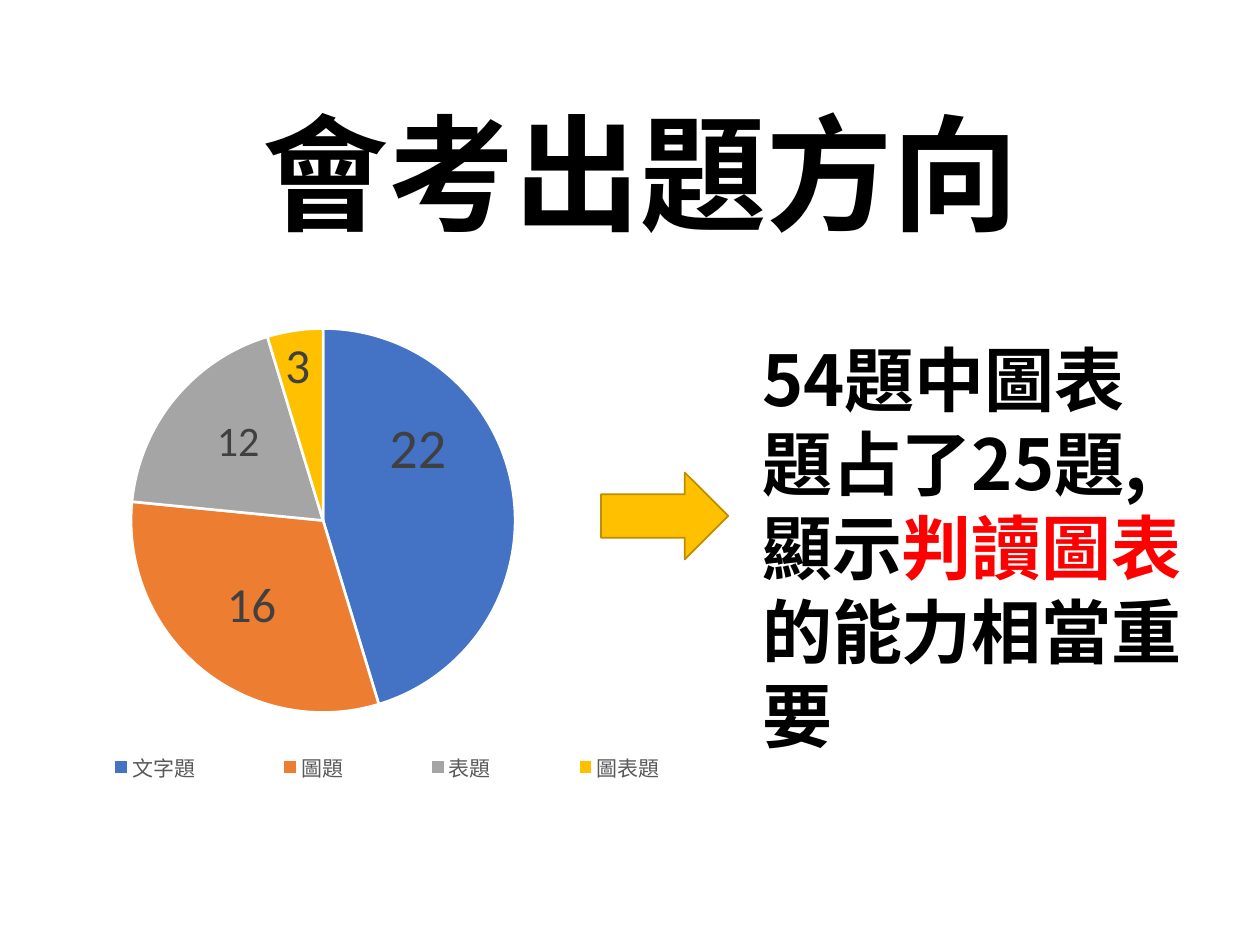
import pptx
import pptx.util
import pptx.oxml
import pptx.oxml.ns
import pptx.dml.color
import pptx.chart.data
import pptx.enum.chart
import pptx.enum.shapes
import pptx.enum.text

Inches = pptx.util.Inches
Pt = pptx.util.Pt
RGBColor = pptx.dml.color.RGBColor
LabelPosition = pptx.enum.chart.XL_LABEL_POSITION

BLACK = RGBColor(0x00, 0x00, 0x00)
WHITE = RGBColor(0xFF, 0xFF, 0xFF)
RED = RGBColor(0xFF, 0x00, 0x00)
GOLD = RGBColor(0xFF, 0xC0, 0x00)
DARK_GOLD = RGBColor(0xBD, 0x8E, 0x00)
BLUE = RGBColor(0x44, 0x72, 0xC4)
ORANGE = RGBColor(0xED, 0x7D, 0x31)
GREY = RGBColor(0xA5, 0xA5, 0xA5)
LABEL_GREY = RGBColor(0x40, 0x40, 0x40)
LEGEND_GREY = RGBColor(0x59, 0x59, 0x59)

HEADING_FONT = "Noto Sans CJK SC"
CHART_FONT = "Calibri"

# Category, value, colour, label, label size, label position, label shift (x, y)
SLICES = [
    ("文字題", 29, BLUE, "22", 32, LabelPosition.CENTER, (0, -0.1)),
    ("圖題", 20, ORANGE, "16", 28, LabelPosition.CENTER, (-0.01, 0.02)),
    ("表題", 12, GREY, "12", 24, LabelPosition.CENTER, (-0.01, -0.03)),
    ("圖表題", 3, GOLD, "3", 28, LabelPosition.INSIDE_END, (-0.01, 0)),
]


def add_text(page, box, size, pieces):
    """Place one paragraph of bold (text, colour) pieces; return frame and paragraph."""
    frame = page.shapes.add_textbox(*map(Inches, box)).text_frame
    frame.word_wrap = True
    para = frame.paragraphs[0]
    for text, colour in pieces:
        span = para.add_run()
        span.text = text
        span.font.size = Pt(size)
        span.font.bold = True
        span.font.name = HEADING_FONT
        span.font.color.rgb = colour
        # East Asian typeface
        east_asian = pptx.oxml.parse_xml(
            f'<a:ea {pptx.oxml.ns.nsdecls("a")} typeface="{HEADING_FONT}"/>')
        span.font._element.find(pptx.oxml.ns.qn("a:latin")).addnext(east_asian)
    return frame, para


def add_title(page, box):
    frame, para = add_text(page, box, 72, [("會考出題方向", BLACK)])
    frame.vertical_anchor = pptx.enum.text.MSO_ANCHOR.MIDDLE
    para.alignment = pptx.enum.text.PP_ALIGN.CENTER
    para.line_spacing = 0.9


def manual_layout(**parts):
    """Chart layout in fractions of the chart frame."""
    inner = "".join(f'<c:{name} val="{value}"/>' for name, value in parts.items())
    return pptx.oxml.parse_xml(
        f'<c:layout {pptx.oxml.ns.nsdecls("c")}>'
        f'<c:manualLayout>{inner}</c:manualLayout></c:layout>')


def style_font(font, size, colour):
    font.name = CHART_FONT
    font.size = Pt(size)
    font.color.rgb = colour


def add_pie(page, box):
    data = pptx.chart.data.CategoryChartData()
    data.categories = [row[0] for row in SLICES]
    data.add_series("Series 1", [row[1] for row in SLICES])
    chart = page.shapes.add_chart(
        pptx.enum.chart.XL_CHART_TYPE.PIE, *map(Inches, box), data).chart
    chart.has_title = False
    style_font(chart.font, 10, BLACK)

    # Plot area
    plot = chart.plots[0]
    plot.vary_by_categories = True
    plot_area = plot._element.getparent()
    for old in plot_area.findall(pptx.oxml.ns.qn("c:layout")):
        plot_area.remove(old)
    plot_area.insert(0, manual_layout(
        layoutTarget="inner", xMode="edge", yMode="edge",
        x=0.3, y=0.14, w=0.36, h=0.67))

    # Legend
    chart.has_legend = True
    legend = chart.legend
    legend.position = pptx.enum.chart.XL_LEGEND_POSITION.BOTTOM
    legend.include_in_layout = False
    style_font(legend.font, 12, LEGEND_GREY)
    for old in legend._element.findall(pptx.oxml.ns.qn("c:layout")):
        legend._element.remove(old)
    legend._element.find(pptx.oxml.ns.qn("c:legendPos")).addnext(manual_layout(
        xMode="edge", yMode="edge", x=0.21, y=0.87, w=0.66, h=0.07))

    # Labels of the whole series
    series = plot.series[0]
    labels = series.data_labels
    labels.show_value = True
    labels.position = LabelPosition.BEST_FIT
    style_font(labels.font, 12, LABEL_GREY)

    # Slices and their own labels
    for index, (_, _, colour, text, size, position, shift) in enumerate(SLICES):
        point = series.points[index]
        point.format.fill.solid()
        point.format.fill.fore_color.rgb = colour
        point.format.line.color.rgb = WHITE
        point.format.line.width = Pt(1.5)
        label = point.data_label
        span = label.text_frame.paragraphs[0].add_run()
        span.text = text
        style_font(span.font, size, LABEL_GREY)
        label.position = position
        label_xml = series._element.findall(".//" + pptx.oxml.ns.qn("c:dLbl"))[index]
        label_xml.insert(1, manual_layout(x=shift[0], y=shift[1]))


def add_conclusion(page, box):
    _, para = add_text(page, box, 40, [
        ("54題中圖表題占了25題,顯示", BLACK),
        ("判讀圖表", RED),
        ("的能力相當重要", BLACK)])
    para.line_spacing = Pt(48)
    para.space_before = Pt(3)


def add_arrow(page, box):
    arrow = page.shapes.add_shape(
        pptx.enum.shapes.MSO_SHAPE.RIGHT_ARROW, *map(Inches, box))
    arrow.shadow.inherit = False
    arrow.fill.solid()
    arrow.fill.fore_color.rgb = GOLD
    arrow.line.color.rgb = DARK_GOLD
    arrow.line.width = Pt(1)


def main():
    deck = pptx.Presentation()
    deck.slide_width, deck.slide_height = Inches(10), Inches(7.5)
    page = deck.slides.add_slide(deck.slide_layouts[6])
    add_title(page, (0.77, 0.71, 8.62, 1.45))
    add_pie(page, (-1.52, 1.97, 8.51, 4.55))
    add_conclusion(page, (5.95, 2.62, 3.62, 2.79))
    add_arrow(page, (4.77, 3.75, 1.01, 0.69))
    deck.save("out.pptx")


if __name__ == "__main__":
    main()
